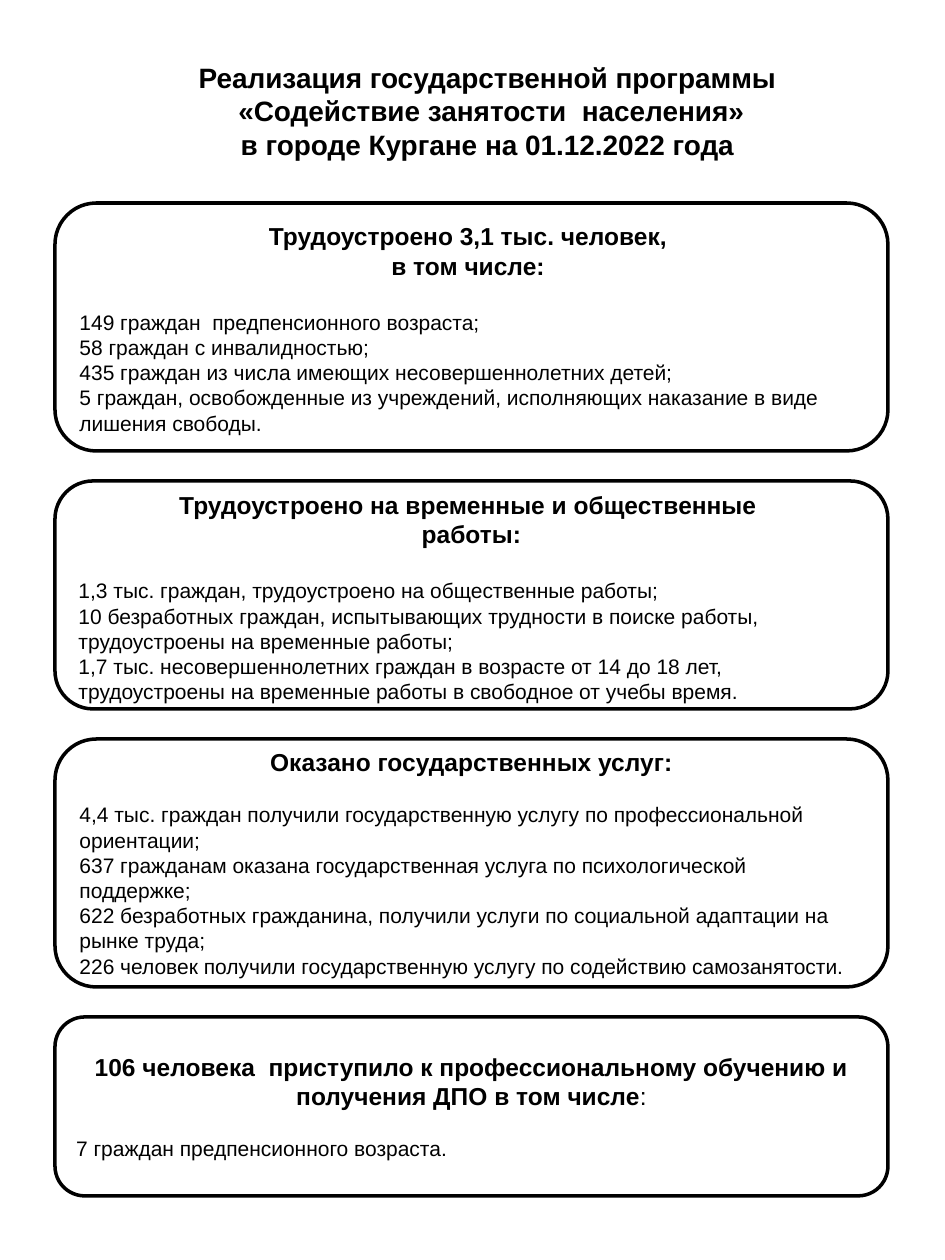
import pptx
import pptx.dml.color
import pptx.enum.shapes
import pptx.enum.text
import pptx.util

PX = 914400 / 126
PAGE_SIZE = (945, 1260)
FONT = "Arial"
INK, PAPER = "000000", "FFFFFF"
TITLE_SIZE, HEADING_SIZE, ITEM_SIZE = 16, 14, 12
LEADING = 1.2

TITLE_AREA = (66, 54, 843, 115)
TITLE = [
    "Реализация государственной программы",
    " «Содействие занятости  населения»",
    "в городе Кургане на 01.12.2022 года",
]

PANEL_LEFT, PANEL_TOP, PANEL_WIDTH, PANEL_GAP = 55, 203, 833, 30
PANELS = [
    {
        "height": 248, "anchor": "TOP", "inset_top": 6, "gap_size": HEADING_SIZE,
        "heading": ["Трудоустроено 3,1 тыс. человек, ", "в том числе: "],
        "items": [
            "149 граждан  предпенсионного возраста;",
            "58 граждан с инвалидностью;",
            "435 граждан из числа имеющих несовершеннолетних детей;",
            "5 граждан, освобожденные из учреждений, исполняющих наказание в виде лишения свободы.",
        ],
    },
    {
        "height": 228, "anchor": "MIDDLE", "inset_top": 10, "gap_size": HEADING_SIZE,
        "heading": ["Трудоустроено на временные и общественные ", "работы:"],
        "items": [
            "1,3 тыс. граждан, трудоустроено на общественные работы;",
            "10 безработных граждан, испытывающих трудности в поиске работы, "
            "трудоустроены на временные работы;",
            "1,7 тыс. несовершеннолетних граждан в возрасте от 14 до 18 лет, "
            "трудоустроены на временные работы в свободное от учебы время.",
        ],
    },
    {
        "height": 248, "anchor": "MIDDLE", "inset_top": 6, "gap_size": ITEM_SIZE,
        "heading": ["Оказано государственных услуг:"],
        "items": [
            "4,4 тыс. граждан получили государственную услугу по профессиональной ориентации;",
            "637 гражданам оказана государственная услуга по психологической поддержке;",
            "622 безработных гражданина, получили услуги по социальной адаптации на рынке труда;",
            "226 человек получили государственную услугу по содействию самозанятости.",
        ],
    },
    {
        "height": 179, "anchor": "MIDDLE", "inset_top": 6, "gap_size": ITEM_SIZE,
        "heading": ["106 человека  приступило к профессиональному обучению "
                    "и получения ДПО в том числе"],
        "plain_ending": ":",
        "items": ["7 граждан предпенсионного возраста."],
    },
]


def px(length):
    return pptx.util.Emu(round(length * PX))


def color(value):
    return pptx.dml.color.RGBColor.from_string(value)


def style_span(span, size, bold):
    span.font.name = FONT
    span.font.size = pptx.util.Pt(size)
    span.font.bold = bold
    span.font.color.rgb = color(INK)


def style_para(para, size, bold, align):
    para.alignment = getattr(pptx.enum.text.PP_ALIGN, align)
    para.line_spacing = pptx.util.Pt(size * LEADING)
    for span in para.runs:
        style_span(span, size, bold)


def add_title(page):
    box = page.shapes.title
    box.left, box.top, box.width, box.height = map(px, TITLE_AREA)
    frame = box.text_frame
    frame.text = "\n".join(TITLE)
    frame.word_wrap = True
    frame.auto_size = pptx.enum.text.MSO_AUTO_SIZE.NONE
    frame.vertical_anchor = pptx.enum.text.MSO_ANCHOR.TOP
    for para in frame.paragraphs:
        style_para(para, TITLE_SIZE, True, "CENTER")


def add_panel(page, panel, top):
    box = page.shapes.add_shape(
        pptx.enum.shapes.MSO_SHAPE.ROUNDED_RECTANGLE,
        px(PANEL_LEFT), px(top), px(PANEL_WIDTH), px(panel["height"]))
    box.shadow.inherit = False
    box.fill.solid()
    box.fill.fore_color.rgb = color(PAPER)
    box.line.color.rgb = color(INK)
    box.line.width = pptx.util.Pt(2)

    frame = box.text_frame
    frame.text = "\n".join(panel["heading"] + panel["items"])
    frame.word_wrap = True
    frame.margin_top = px(panel["inset_top"])
    frame.vertical_anchor = getattr(pptx.enum.text.MSO_ANCHOR, panel["anchor"])
    heading_count = len(panel["heading"])
    headings = frame.paragraphs[:heading_count]
    items = frame.paragraphs[heading_count:]
    for para in headings:
        style_para(para, HEADING_SIZE, True, "CENTER")
    for para in items:
        style_para(para, ITEM_SIZE, False, "LEFT")
    items[0].space_before = pptx.util.Pt(panel["gap_size"] * LEADING)
    if "plain_ending" in panel:
        span = headings[-1].add_run()
        span.text = panel["plain_ending"]
        style_span(span, HEADING_SIZE, False)


def main():
    deck = pptx.Presentation()
    deck.slide_width, deck.slide_height = map(px, PAGE_SIZE)
    page = deck.slides.add_slide(deck.slide_layouts.get_by_name("Title Only"))
    add_title(page)
    top = PANEL_TOP
    for panel in PANELS:
        add_panel(page, panel, top)
        top += panel["height"] + PANEL_GAP
    deck.save("out.pptx")


if __name__ == "__main__":
    main()
